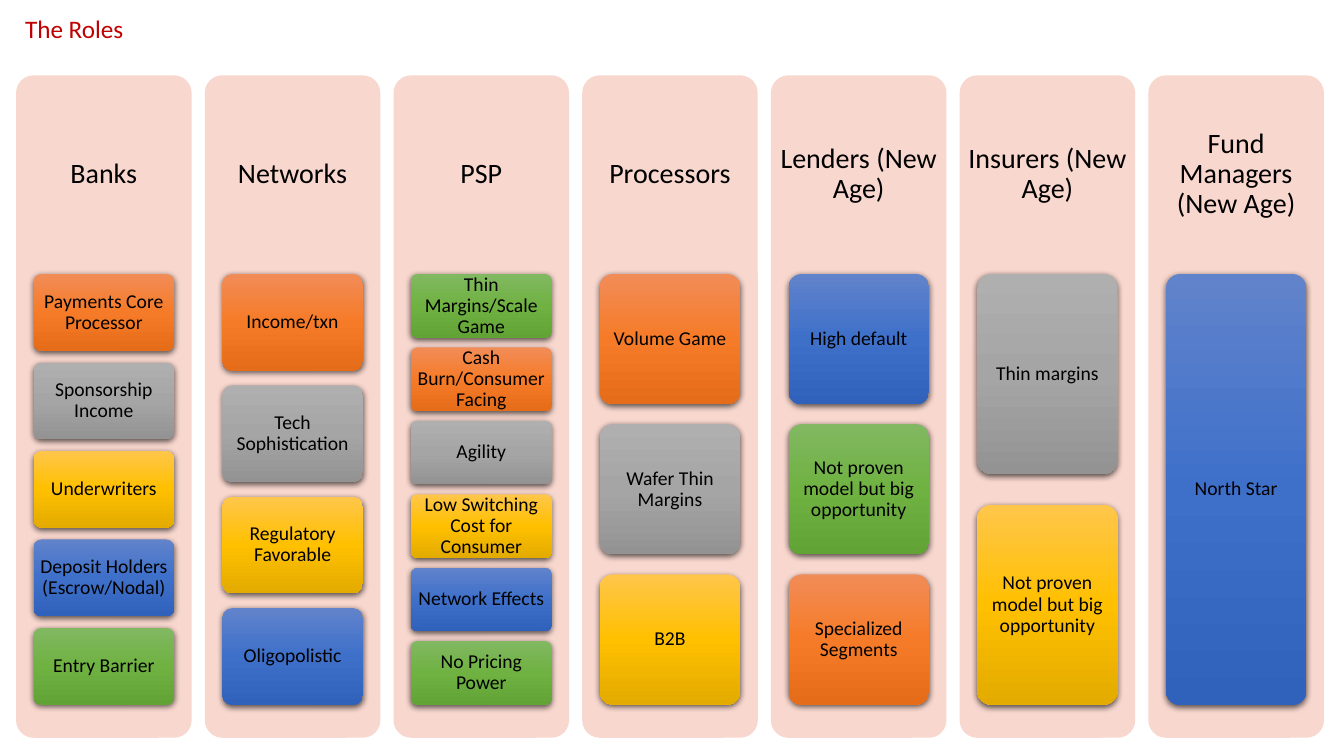
from pptx import Presentation
from pptx.dml.color import RGBColor
from pptx.enum.shapes import MSO_SHAPE
from pptx.enum.text import MSO_ANCHOR, PP_ALIGN
from pptx.oxml import parse_xml
from pptx.oxml.ns import nsdecls, qn
from pptx.util import Pt

# Colours: each card gradient runs from top through middle to bottom
RED = RGBColor(0xC0, 0x00, 0x00)
BLACK = RGBColor(0x00, 0x00, 0x00)
PINK = RGBColor(0xF8, 0xD7, 0xCE)
ORANGE = (RGBColor(0xF1, 0x8C, 0x57), RGBColor(0xF6, 0x7B, 0x28), RGBColor(0xE5, 0x6C, 0x19))
GREY = (RGBColor(0xAF, 0xAF, 0xAF), RGBColor(0xA5, 0xA5, 0xA5), RGBColor(0x93, 0x93, 0x93))
YELLOW = (RGBColor(0xFF, 0xC6, 0x4B), RGBColor(0xFF, 0xC0, 0x00), RGBColor(0xE3, 0xAB, 0x00))
BLUE = (RGBColor(0x61, 0x83, 0xCB), RGBColor(0x3E, 0x70, 0xCA), RGBColor(0x30, 0x62, 0xBB))
GREEN = (RGBColor(0x81, 0xB8, 0x61), RGBColor(0x6F, 0xB2, 0x42), RGBColor(0x62, 0xA3, 0x36))

# Content
TITLE = "The Roles"
ROLES = [
    ("Banks", [
        ("Payments Core Processor", ORANGE),
        ("Sponsorship Income", GREY),
        ("Underwriters", YELLOW),
        ("Deposit Holders (Escrow/Nodal)", BLUE),
        ("Entry Barrier", GREEN),
    ]),
    ("Networks", [
        ("Income/txn", ORANGE),
        ("Tech Sophistication", GREY),
        ("Regulatory Favorable", YELLOW),
        ("Oligopolistic", BLUE),
    ]),
    ("PSP", [
        ("Thin Margins/Scale Game", GREEN),
        ("Cash Burn/Consumer Facing", ORANGE),
        ("Agility", GREY),
        ("Low Switching Cost for Consumer", YELLOW),
        ("Network Effects", BLUE),
        ("No Pricing Power", GREEN),
    ]),
    ("Processors", [
        ("Volume Game", ORANGE),
        ("Wafer Thin Margins", GREY),
        ("B2B", YELLOW),
    ]),
    ("Lenders (New Age)", [
        ("High default", BLUE),
        ("Not proven model but big opportunity", GREEN),
        ("Specialized Segments", ORANGE),
    ]),
    ("Insurers (New Age)", [
        ("Thin margins", GREY),
        ("Not proven model but big opportunity", YELLOW),
    ]),
    ("Fund Managers (New Age)", [
        ("North Star", BLUE),
    ]),
]

# Layout in points
PANEL_LEFT, PANEL_TOP = 11.5, 53.8
PANEL_WIDTH, PANEL_HEIGHT = 125.4, 473.2
PANEL_PITCH = 134.8
HEADER_HEIGHT = 0.3 * PANEL_HEIGHT
STACK_HEIGHT = 0.65 * PANEL_HEIGHT
CARD_INSET = 0.1 * PANEL_WIDTH
CARD_WIDTH = 0.8 * PANEL_WIDTH
GAP_RATIO = 2 / 13  # gap between cards, relative to card height
CORNER = 0.1


def write_centred(shape, text, size, side_margin, end_margin):
    frame = shape.text_frame
    frame.word_wrap = True
    frame.vertical_anchor = MSO_ANCHOR.MIDDLE
    frame.margin_left = frame.margin_right = Pt(side_margin)
    frame.margin_top = frame.margin_bottom = Pt(end_margin)
    paragraph = frame.paragraphs[0]
    paragraph.text = text
    paragraph.alignment = PP_ALIGN.CENTER
    paragraph.line_spacing = 0.9
    style_font(paragraph.font, size, BLACK)


def style_font(font, size, color):
    font.name = "Calibri"
    font.size = Pt(size)
    font.color.rgb = color


def add_rounded(slide, left, top, width, height):
    shape = slide.shapes.add_shape(
        MSO_SHAPE.ROUNDED_RECTANGLE, Pt(left), Pt(top), Pt(width), Pt(height))
    shape.adjustments[0] = CORNER
    shape.line.fill.background()
    shape.shadow.inherit = False
    return shape


def fill_gradient(shape, colors):
    shape.fill.gradient()
    shape.fill.gradient_angle = 270
    stops = shape.element.spPr.find(qn("a:gradFill")).find(qn("a:gsLst"))
    for stop in list(stops):
        stops.remove(stop)
    for position, color in zip((0, 50000, 100000), colors):
        stops.append(parse_xml(
            f'<a:gs {nsdecls("a")} pos="{position}"><a:srgbClr val="{color}"/></a:gs>'))


def drop_shadow(shape):
    shape.element.spPr.find(qn("a:effectLst")).append(parse_xml(
        f'<a:outerShdw {nsdecls("a")} blurRad="{Pt(4.5)}" dist="{Pt(1.5)}" dir="5400000" '
        'algn="ctr" rotWithShape="0"><a:srgbClr val="000000"><a:alpha val="63000"/>'
        '</a:srgbClr></a:outerShdw>'))


def add_role(slide, left, role, cards):
    # Panel and its heading
    panel = add_rounded(slide, left, PANEL_TOP, PANEL_WIDTH, PANEL_HEIGHT)
    panel.fill.solid()
    panel.fill.fore_color.rgb = PINK
    heading = slide.shapes.add_textbox(
        Pt(left), Pt(PANEL_TOP), Pt(PANEL_WIDTH), Pt(HEADER_HEIGHT))
    write_centred(heading, role, 20, 6, 6)

    # Cards share the stack height evenly
    count = len(cards)
    card_height = STACK_HEIGHT / (count + (count - 1) * GAP_RATIO)
    for row, (text, colors) in enumerate(cards):
        top = PANEL_TOP + HEADER_HEIGHT + row * card_height * (1 + GAP_RATIO)
        card = add_rounded(slide, left + CARD_INSET, top, CARD_WIDTH, card_height)
        fill_gradient(card, colors)
        drop_shadow(card)
        write_centred(card, text, 14, 2.8, 2.1)


def main():
    presentation = Presentation()
    presentation.slide_width, presentation.slide_height = Pt(960), Pt(540)
    slide = presentation.slides.add_slide(presentation.slide_layouts[6])

    # Title
    title = slide.shapes.add_textbox(Pt(10.8), Pt(5.8), Pt(935), Pt(29))
    title.text_frame.word_wrap = True
    paragraph = title.text_frame.paragraphs[0]
    paragraph.text = TITLE
    style_font(paragraph.font, 18, RED)

    # Role columns
    for column, (role, cards) in enumerate(ROLES):
        add_role(slide, PANEL_LEFT + column * PANEL_PITCH, role, cards)

    presentation.save("out.pptx")


if __name__ == "__main__":
    main()
